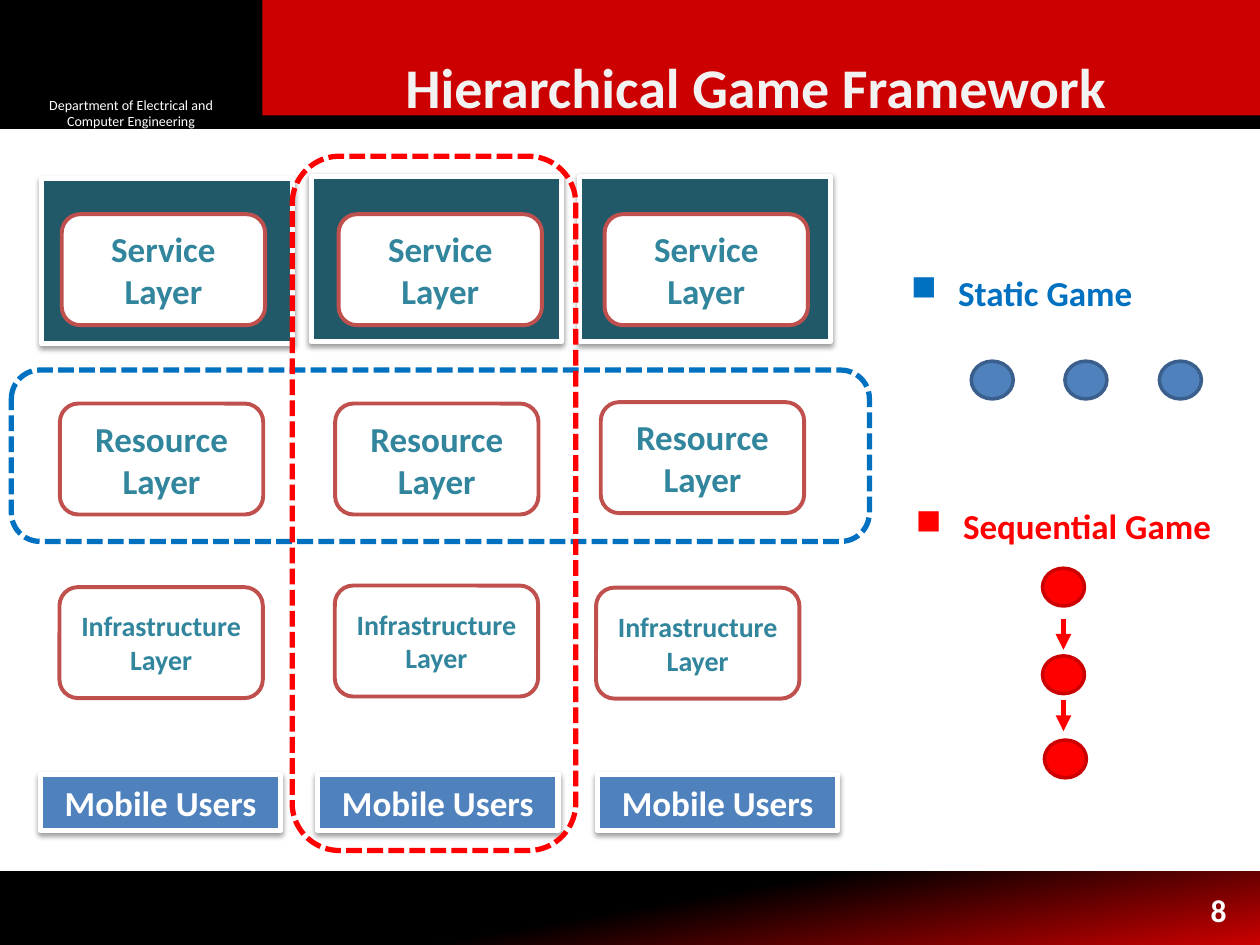
from lxml.etree import SubElement
from pptx import Presentation
from pptx.dml.color import RGBColor
from pptx.enum.dml import MSO_LINE
from pptx.enum.shapes import MSO_CONNECTOR, MSO_SHAPE
from pptx.enum.text import MSO_ANCHOR, PP_ALIGN
from pptx.oxml import parse_xml
from pptx.oxml.ns import nsdecls, qn
from pptx.util import Pt

COLORS = {
    "black": "000000", "white": "FFFFFF", "banner": "CC0000", "title": "F2F2F2",
    "panel": "215968", "layer": "31859C", "layer_edge": "C0504D",
    "blue": "4F81BD", "blue_edge": "3A5F8C", "static": "0070C0", "sequential": "FF0000",
}
SHADOW = (
    f'<a:effectLst {nsdecls("a")}><a:outerShdw blurRad="40000" dist="20000" dir="5400000" '
    'rotWithShape="0"><a:srgbClr val="000000"><a:alpha val="38000"/></a:srgbClr>'
    '</a:outerShdw></a:effectLst>'
)


class Deck:
    """Hold the style and the current slide, and draw each kind of element."""

    font = "Calibri"

    def __init__(self, width, height):
        self.presentation = Presentation()
        self.presentation.slide_width = Pt(width)
        self.presentation.slide_height = Pt(height)
        self.slide = self.presentation.slides.add_slide(self.presentation.slide_layouts[6])

    def color(self, name):
        return RGBColor.from_string(COLORS[name])

    def label(self, shape, text, size, color, bold=True, align=PP_ALIGN.CENTER,
              anchor=MSO_ANCHOR.MIDDLE, bullet=None):
        frame = shape.text_frame
        frame.word_wrap = True
        frame.vertical_anchor = anchor
        paragraph = frame.paragraphs[0]
        paragraph.text = text
        paragraph.alignment = align
        if bullet:
            properties = paragraph._p.get_or_add_pPr()
            properties.set("marL", str(Pt(27)))
            properties.set("indent", str(-Pt(27)))
            SubElement(properties, qn("a:buChar"), char=bullet)
        paragraph.font.name = self.font
        paragraph.font.size = Pt(size)
        paragraph.font.bold = bold
        paragraph.font.color.rgb = self.color(color)

    def shape(self, kind, left, top, width, height, fill=None, line=None, weight=2,
              dash=None, shadow=False):
        shape = self.slide.shapes.add_shape(kind, Pt(left), Pt(top), Pt(width), Pt(height))
        shape.shadow.inherit = False
        if shadow:
            properties = shape._element.spPr
            properties.replace(properties.find(qn("a:effectLst")), parse_xml(SHADOW))
        if fill:
            shape.fill.solid()
            shape.fill.fore_color.rgb = self.color(fill)
        else:
            shape.fill.background()
        if line:
            shape.line.color.rgb = self.color(line)
            shape.line.width = Pt(weight)
            if dash:
                shape.line.dash_style = dash
        else:
            shape.line.fill.background()
        return shape

    def text(self, left, top, width, height, text, size, color, **style):
        box = self.slide.shapes.add_textbox(Pt(left), Pt(top), Pt(width), Pt(height))
        self.label(box, text, size, color, **style)

    def footer(self, top, width, height):
        band = self.shape(MSO_SHAPE.RECTANGLE, 0, top, width, height)
        band.fill.gradient()
        band.fill.gradient_angle = 280
        for stop, position, name in zip(band.fill.gradient_stops, (0.5, 1), ("black", "banner")):
            stop.position = position
            stop.color.rgb = self.color(name)

    def panel(self, left, top):
        self.shape(MSO_SHAPE.RECTANGLE, left, top, 143.3, 94.3, "panel", "white", 3, shadow=True)

    def layer(self, left, top, text, size):
        box = self.shape(MSO_SHAPE.ROUNDED_RECTANGLE, left, top, 116.2, 63.4,
                         "white", "layer_edge", 2.25)
        self.label(box, text, size, "layer")

    def users(self, left):
        box = self.shape(MSO_SHAPE.RECTANGLE, left, 442.8, 137.5, 31.7,
                         "blue", "white", 3, shadow=True)
        self.label(box, "Mobile Users", 20, "white")

    def group(self, left, top, width, height, color):
        self.shape(MSO_SHAPE.ROUNDED_RECTANGLE, left, top, width, height,
                   line=color, weight=3, dash=MSO_LINE.SQUARE_DOT)
        self.slide.shapes[-1].line._get_or_add_ln().prstDash.set("val", "sysDash")

    def player(self, left, top, fill, line):
        self.shape(MSO_SHAPE.OVAL, left, top, 24, 21.6, fill, line)

    def arrow(self, x, top, bottom, color):
        arrow = self.slide.shapes.add_connector(
            MSO_CONNECTOR.STRAIGHT, Pt(x), Pt(top), Pt(x), Pt(bottom))
        arrow.line.color.rgb = self.color(color)
        arrow.line.width = Pt(3)
        SubElement(arrow.line._get_or_add_ln(), qn("a:tailEnd"), type="triangle")
        SubElement(arrow._element.spPr, qn("a:effectLst"))


def main():
    deck = Deck(720, 540)

    deck.footer(498, 720, 42)
    deck.shape(MSO_SHAPE.RECTANGLE, 0, 0.7, 720, 72, "black", "black")
    department = deck.shape(MSO_SHAPE.RECTANGLE, 12, 55.5, 126, 18, "black")
    deck.label(department, "Department of Electrical and Computer Engineering", 8, "white",
               bold=False)
    deck.shape(MSO_SHAPE.RECTANGLE, 150, 0, 570, 66, "banner")
    deck.text(174, 25, 516, 48, "Hierarchical Game Framework", 32, "title")
    deck.text(540, 505.5, 168, 29, "8", 18, "white", align=PP_ALIGN.RIGHT,
              anchor=MSO_ANCHOR.TOP)

    for left, top in ((23.8, 102.2), (177.8, 100.8), (331.2, 100.8)):
        deck.panel(left, top)
    for left in (23, 181.4, 341.3):
        deck.users(left)

    layers = (
        ("Service Layer", 20, ((35.3, 122.4), (193.5, 122.4), (345.5, 122.4))),
        ("Resource Layer", 20, ((34.2, 230.6), (191.5, 230.6), (343.3, 229.8))),
        ("Infrastructure Layer", 16, ((34, 335.5), (191.3, 334.6), (340.6, 335.8))),
    )
    for name, size, places in layers:
        for left, top in places:
            deck.layer(left, top, name, size)

    deck.group(6.5, 211.5, 490.3, 97.9, "static")
    deck.group(167, 89.3, 162, 396.7, "sequential")

    legend = (("Static Game", 513.4, 151.5, "static"),
              ("Sequential Game", 516.2, 284.9, "sequential"))
    for game, left, top, color in legend:
        deck.text(left, top, 198, 31.7, game, 20, color, align=PP_ALIGN.LEFT,
                  anchor=MSO_ANCHOR.TOP, bullet="■")
    for left in (555, 608.5, 662.5):
        deck.player(left, 206.4, "blue", "blue_edge")
    for left, top in ((595.7, 324.7), (595.7, 374.8), (596.8, 422.9)):
        deck.player(left, top, "sequential", "banner")
    for top in (353.5, 400):
        deck.arrow(607.7, top, top + 17.8, "sequential")

    deck.presentation.save("out.pptx")


if __name__ == "__main__":
    main()
